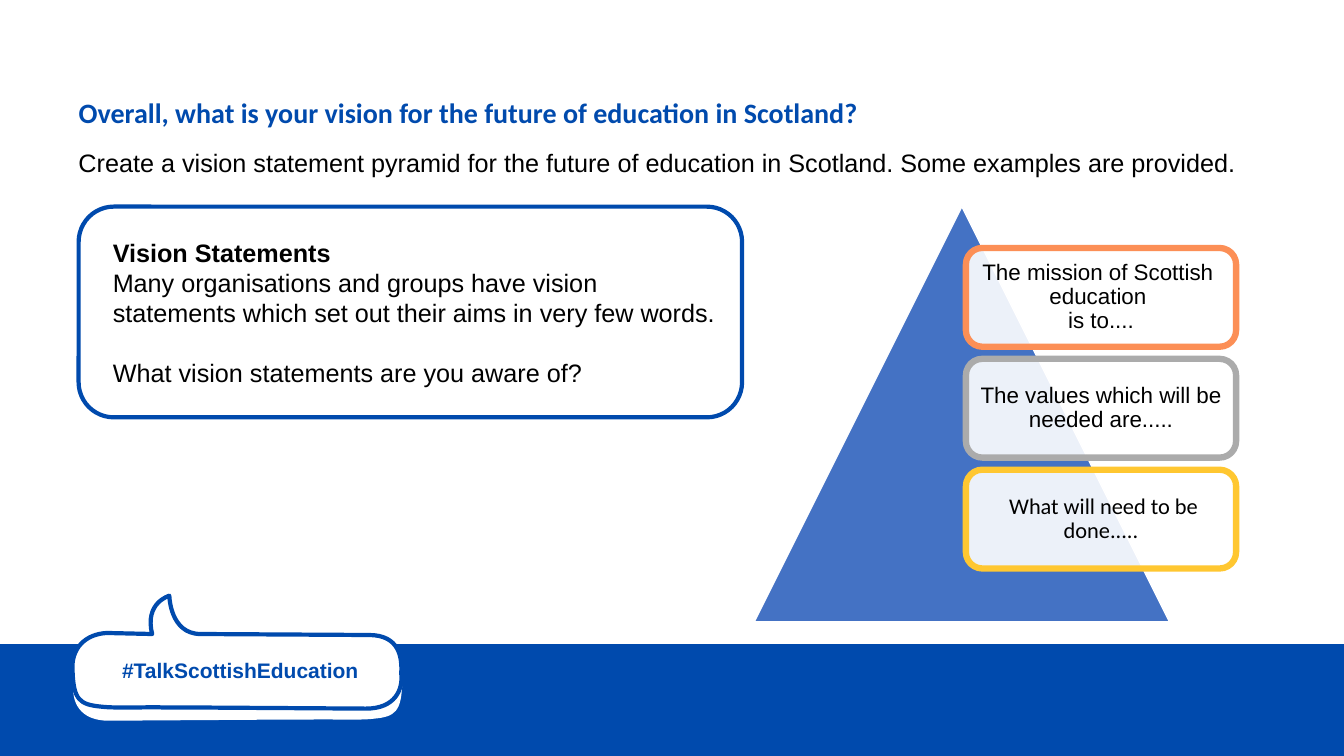
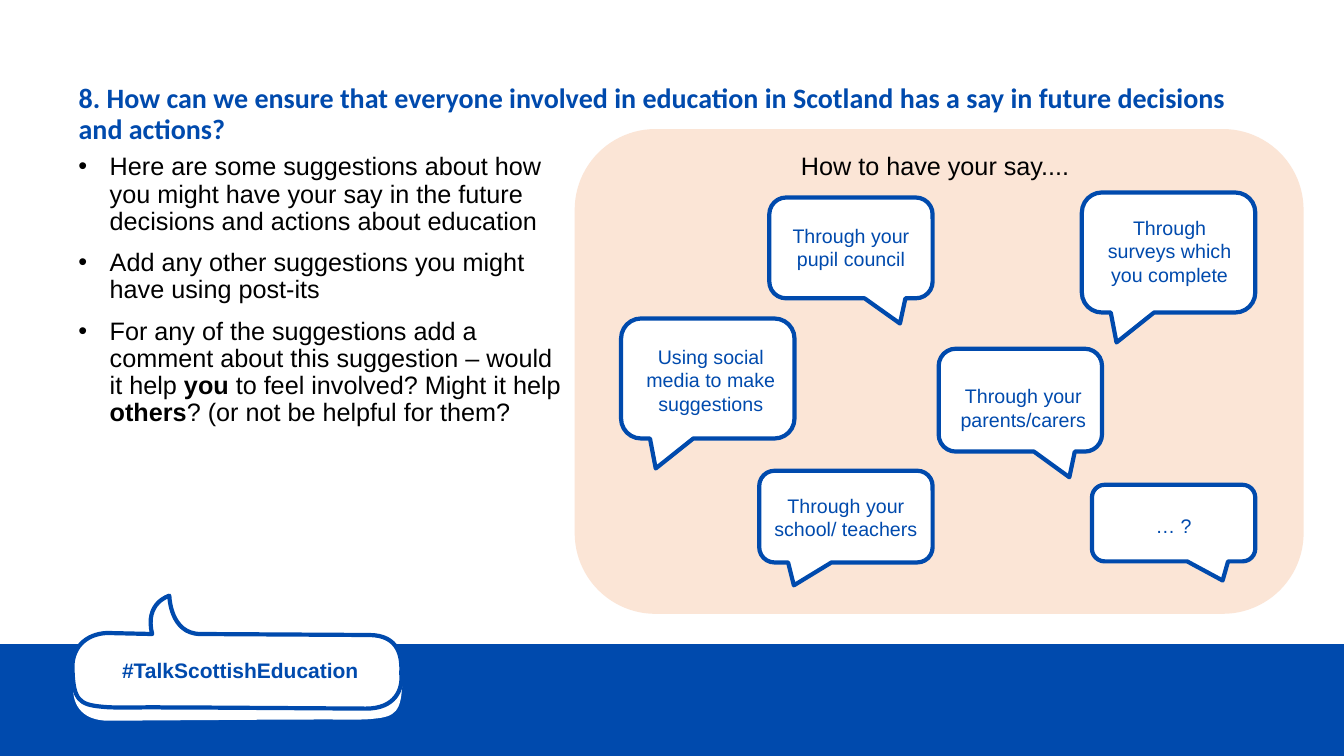
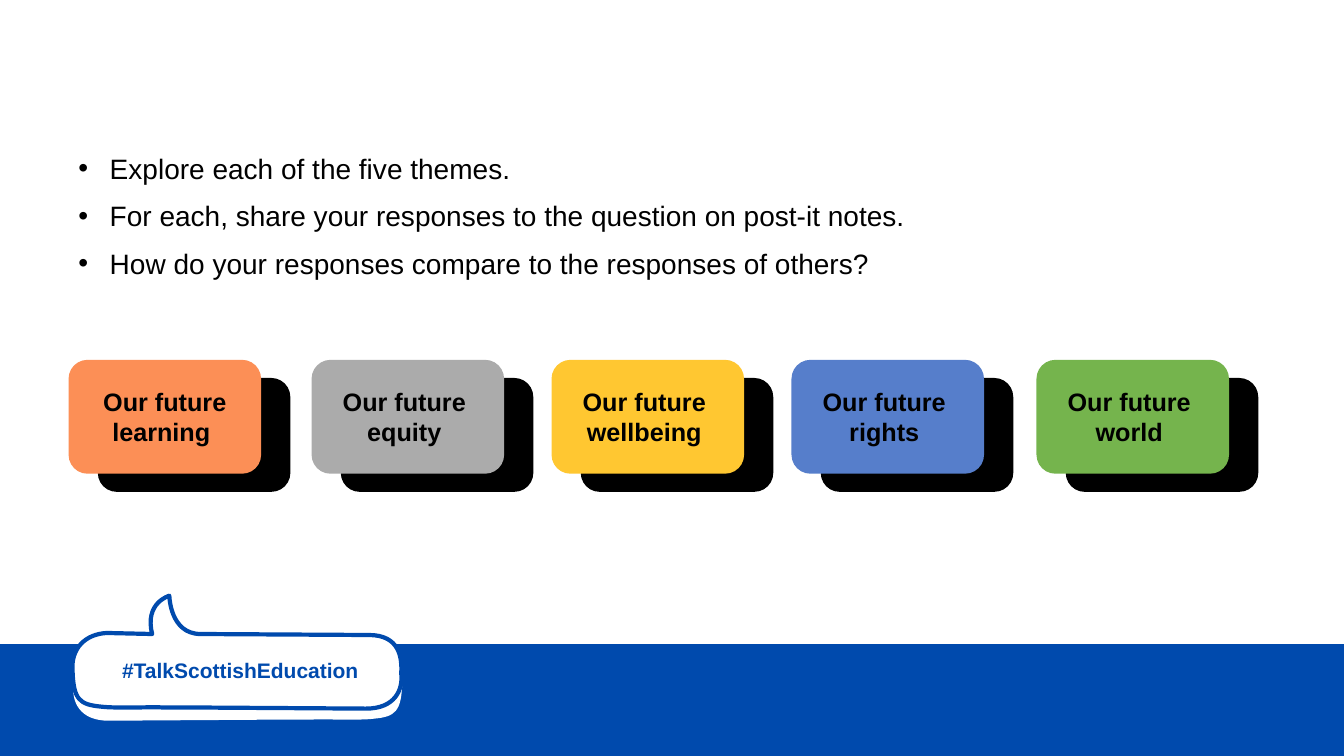
from lxml import etree
from pptx import Presentation
from pptx.dml.color import RGBColor
from pptx.enum.shapes import MSO_SHAPE
from pptx.enum.text import MSO_ANCHOR, MSO_AUTO_SIZE, PP_ALIGN
from pptx.oxml.ns import qn
from pptx.util import Inches, Pt

RECT = MSO_SHAPE.RECTANGLE
ROUNDED = MSO_SHAPE.ROUNDED_RECTANGLE
TRIANGLE = MSO_SHAPE.ISOSCELES_TRIANGLE
CALLOUT = MSO_SHAPE.ROUNDED_RECTANGULAR_CALLOUT
TOP, MIDDLE = MSO_ANCHOR.TOP, MSO_ANCHOR.MIDDLE
LEFT, CENTER = PP_ALIGN.LEFT, PP_ALIGN.CENTER
NO_FIT = MSO_AUTO_SIZE.NONE

BLUE, BLACK, WHITE = "004AAD", "000000", "FFFFFF"
ORANGE, GREY, YELLOW = "FC8F56", "ABABAB", "FFC731"
TITLE_ONLY, BLANK = 5, 6
MARGIN, BODY_WIDTH = 0.68, 11.75

HASHTAG = " #TalkScottishEducation"
BUBBLE_START = (3.98, 6.68)
BUBBLE_PATH = [
    [(3.99, 6.52), (3.96, 6.3), (3.66, 6.3)],
    [(1.99, 6.29)],
    [(1.69, 6.29), (1.68, 5.92), (1.68, 5.91)],
    [(1.68, 5.91), (1.43, 5.98), (1.51, 6.29)],
    [(1.06, 6.28)],
    [(0.85, 6.29), (0.7, 6.43), (0.72, 6.66)],
    [(0.73, 6.94), (0.79, 6.99), (1, 7.01)],
    [(1.15, 7.03), (1.54, 7.01), (1.63, 7.02)],
    [(2.07, 7.02)],
    [(3.63, 7.03)],
    [(3.92, 7.03), (4, 6.84), (3.98, 6.68)],
]

VISION_TITLE = "Overall, what is your vision for the future of education in Scotland?"
VISION_TASK = ("Create a vision statement pyramid for the future of education in Scotland. "
               "Some examples are provided.")
VISION_NOTES = [
    [("Vision Statements", True)],
    "Many organisations and groups have vision statements which set out their aims in very few words.",
    "What vision statements are you aware of?",
]
PYRAMID_LEVELS = [
    ("The mission of Scottish \neducation \nis to....", ORANGE, "Arial"),
    ("The values which will be needed are.....", GREY, "Arial"),
    (" What will need to be done.....", YELLOW, "Calibri"),
]

SAY_TITLE = ("8. How can we ensure that everyone involved in education in Scotland "
             "has a say in future decisions and actions?")
SAY_POINTS = [
    "Here are some suggestions about how you might have your say in the future "
    "decisions and actions about education",
    "Add any other suggestions you might have using post-its",
    [("For any of the suggestions add a comment about this suggestion – would it help ", False),
     ("you", True), (" to feel involved? Might it help", False),
     (" others", True), ("? (or not be helpful for them?", False)],
]
SAY_HEADING = "How to have your say...."
TAIL_LEFT, TAIL_RIGHT = -0.3, 0.3
SUGGESTIONS = [
    ("Through your pupil council", (7.63, 1.96, 1.62, 1), TAIL_RIGHT, (7.63, 2.17, 1.62, 0.57)),
    ("Through surveys which you complete", (10.73, 1.91, 1.72, 1.19), TAIL_LEFT,
     (10.79, 2.09, 1.62, 0.81)),
    ("Using social media to make\nsuggestions", (6.16, 3.16, 1.72, 1.19), TAIL_LEFT,
     (6.16, 3.37, 1.78, 0.81)),
    ("Through your parents/carers", (9.31, 3.46, 1.62, 1.02), TAIL_RIGHT, (9.34, 3.76, 1.62, 0.57)),
    ("… ?", (10.83, 4.81, 1.62, 0.76), TAIL_RIGHT, (10.83, 5.05, 1.62, 0.34)),
    ("Through your school/ teachers", (7.53, 4.67, 1.72, 0.91), TAIL_LEFT, (7.5, 4.85, 1.78, 0.57)),
]

THEME_POINTS = [
    "Explore each of the five themes.",
    "For each, share your responses to the question on post-it notes.",
    "How do your responses compare to the responses of others?",
]
THEMES = [
    ("Our future learning ", ORANGE, 0.68),
    ("Our future \nequity ", GREY, 3.09),
    ("Our future \nwellbeing ", YELLOW, 5.47),
    ("Our future \nrights ", "567ECB", 7.85),
    ("Our future \nworld ", "75B44D", 10.28),
]


def rgb(value):
    return RGBColor.from_string(value)


def paint(shape, fill=None, line=None, width=3):
    shape.shadow.inherit = False
    if fill:
        shape.fill.solid()
        shape.fill.fore_color.rgb = rgb(fill)
    else:
        shape.fill.background()
    if line:
        shape.line.color.rgb = rgb(line)
        shape.line.width = Pt(width)
    else:
        shape.line.fill.background()
    return shape


def add_box(page, kind, area, fill=None, line=None, width=3):
    shape = page.shapes.add_shape(kind, *map(Inches, area))
    return paint(shape, fill, line, width)


def set_opacity(shape, percent):
    color = shape.element.spPr.find(".//" + qn("a:srgbClr"))
    etree.SubElement(color, qn("a:alpha")).set("val", str(percent * 1000))


def add_bullet(para):
    props = para._p.get_or_add_pPr()
    props.set("marL", str(Inches(0.31)))
    props.set("indent", str(-Inches(0.31)))
    etree.SubElement(props, qn("a:buFont")).set("typeface", "Arial")
    etree.SubElement(props, qn("a:buChar")).set("char", "•")


def write(shape, paragraphs, size, color=BLACK, font="Arial", bold=False, align=LEFT,
          anchor=TOP, spacing=None, before=0, bullets=False, insets=(0.1, 0.05, 0.1, 0.05)):
    frame = shape.text_frame
    frame.word_wrap = True
    frame.auto_size = NO_FIT
    frame.vertical_anchor = anchor
    frame.margin_left, frame.margin_top, frame.margin_right, frame.margin_bottom = map(Inches, insets)
    for index, content in enumerate(paragraphs):
        para = frame.add_paragraph() if index else frame.paragraphs[0]
        para.alignment = align
        para.space_before = Pt(before)
        if spacing:
            para.line_spacing = spacing
        if bullets:
            add_bullet(para)
        runs = [(content, bold)] if isinstance(content, str) else content
        for text, strong in runs:
            for number, piece in enumerate(text.split("\n")):
                if number:
                    para.add_line_break()
                span = para.add_run()
                span.text = piece
                span.font.name = font
                span.font.size = Pt(size)
                span.font.bold = strong
                span.font.color.rgb = rgb(color)


def add_text(page, area, paragraphs, size, **style):
    box = page.shapes.add_textbox(*map(Inches, area))
    write(box, paragraphs, size, **style)
    return box


def set_title(page, text):
    title = page.shapes.title
    title.left, title.top, title.width, title.height = map(Inches, (MARGIN, 0.83, BODY_WIDTH, 0.62))
    write(title, [text], 20, BLUE, "Calibri", True, anchor=MIDDLE, spacing=0.9, before=10)


def add_bubble(page, place, line=None):
    def to_emu(point):
        return tuple(map(Inches, place(*point)))

    segments = [[to_emu(point) for point in segment] for segment in BUBBLE_PATH]
    builder = page.shapes.build_freeform(*to_emu(BUBBLE_START))
    builder.add_line_segments([segment[-1] for segment in segments], close=True)
    shape = builder.convert_to_shape()
    steps = list(shape.element.iter(qn("a:lnTo")))
    for step, segment in zip(steps, segments):
        if len(segment) == 3:
            curve = etree.Element(qn("a:cubicBezTo"))
            for x, y in segment:
                point = etree.SubElement(curve, qn("a:pt"))
                point.set("x", str(x - shape.left))
                point.set("y", str(y - shape.top))
            step.getparent().replace(step, curve)
    return paint(shape, WHITE, line)


def brand_master(deck, page):
    parts = [
        add_box(page, RECT, (0, 6.39, 13.45, 1.31), BLUE),
        add_bubble(page, lambda x, y: (4.71 - x, y + 0.12)),
        add_bubble(page, lambda x, y: (x, y), BLUE),
        add_text(page, (0.72, 6.47, 3.27, 0.35), [HASHTAG], 15, color=BLUE, bold=True,
                 align=CENTER, anchor=MIDDLE),
    ]
    for part in parts:
        deck.slide_master.shapes.element.append(part.element)


def build_vision(page):
    set_title(page, VISION_TITLE)
    add_text(page, (MARGIN, 1.45, BODY_WIDTH, 0.53), [VISION_TASK], 18, spacing=0.9, before=10)
    add_box(page, TRIANGLE, (7.48, 2.05, 4.12, 4.12), "4472C4", WHITE, 1)
    for row, (text, color, font) in enumerate(PYRAMID_LEVELS):
        top = 2.46 + 1.1 * row
        level = add_box(page, ROUNDED, (9.58, top, 2.68, 0.98), WHITE, color, 4.5)
        set_opacity(level, 90)
        add_text(page, (9.63, top + 0.05, 2.58, 0.88), [text], 16, font=font, align=CENTER,
                 anchor=MIDDLE, spacing=0.9, insets=(0.07,) * 4)
    notes = add_text(page, (1.02, 2.3, 6.19, 1.62), VISION_NOTES, 18)
    notes.text_frame.paragraphs[-1].space_before = Pt(21.6)
    add_box(page, ROUNDED, (0.78, 2.05, 6.58, 2.09), line=BLUE)


def build_say(page):
    set_title(page, SAY_TITLE)
    add_box(page, ROUNDED, (5.7, 1.28, 7.23, 4.81), "FBE5D6")
    add_text(page, (MARGIN, 1.48, 5.02, 5.11), SAY_POINTS, 18, spacing=0.9, before=10, bullets=True)
    for text, area, tail, text_area in SUGGESTIONS:
        callout = add_box(page, CALLOUT, area, WHITE, BLUE)
        callout.adjustments[0] = tail
        callout.adjustments[1] = 0.75
        add_text(page, text_area, [text], 14, color=BLUE, align=CENTER)
    add_text(page, (5.92, 1.44, 6.71, 0.4), [SAY_HEADING], 18, align=CENTER)


def build_themes(page):
    add_text(page, (MARGIN, 1.45, BODY_WIDTH, 1.8), THEME_POINTS, 20, before=10, bullets=True)
    for text, color, left in THEMES:
        add_box(page, ROUNDED, (left + 0.29, 3.75, 1.91, 1.13), BLACK)
        tile = add_box(page, ROUNDED, (left, 3.57, 1.91, 1.13), color)
        write(tile, [text], 18, bold=True, align=CENTER, anchor=MIDDLE)


def main():
    deck = Presentation()
    deck.slide_width, deck.slide_height = Inches(13.33), Inches(7.5)
    builders = [(build_vision, TITLE_ONLY), (build_say, TITLE_ONLY), (build_themes, BLANK)]
    for index, (build, layout) in enumerate(builders):
        page = deck.slides.add_slide(deck.slide_layouts[layout])
        if index == 0:
            brand_master(deck, page)
        build(page)
    deck.save("out.pptx")


if __name__ == "__main__":
    main()
